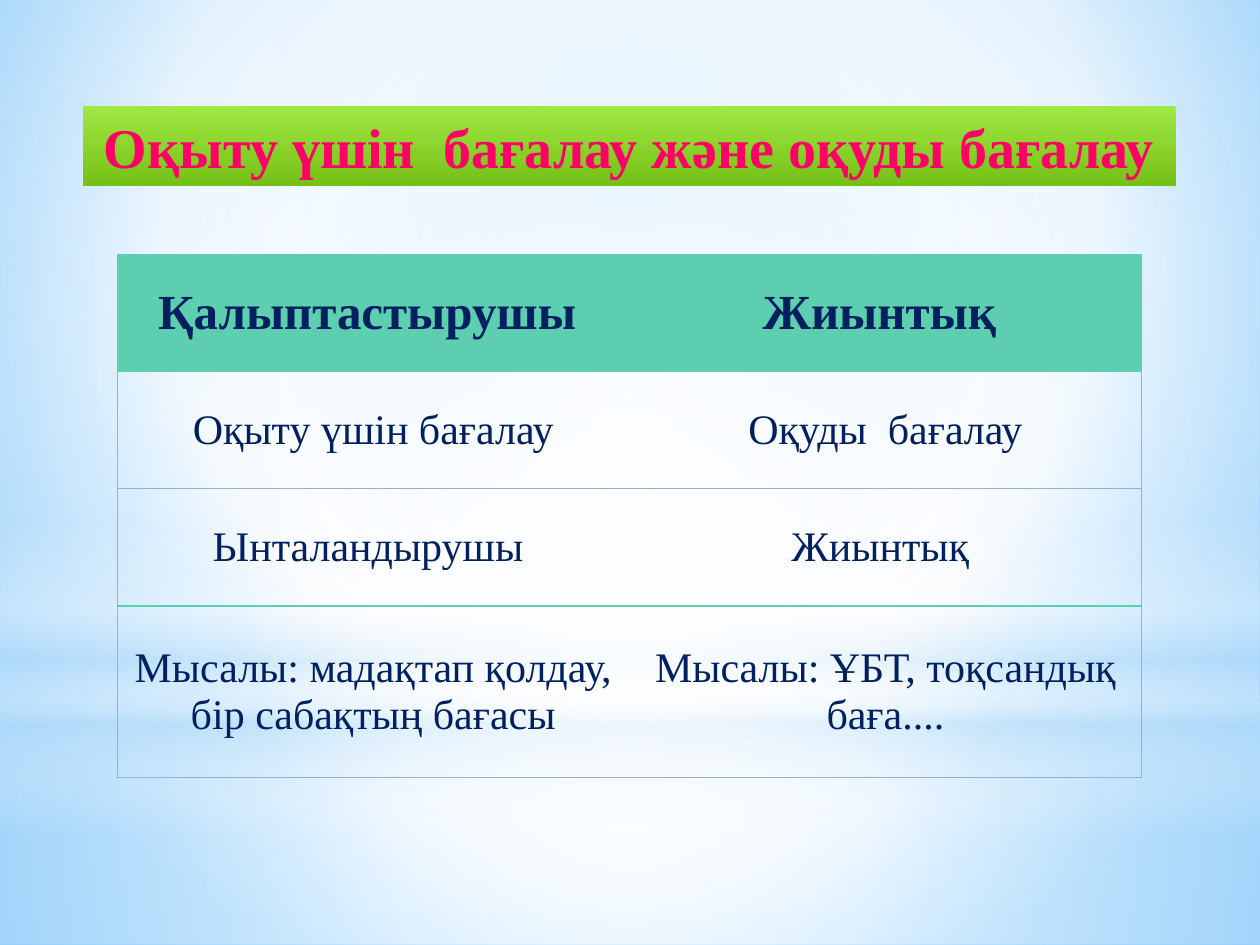
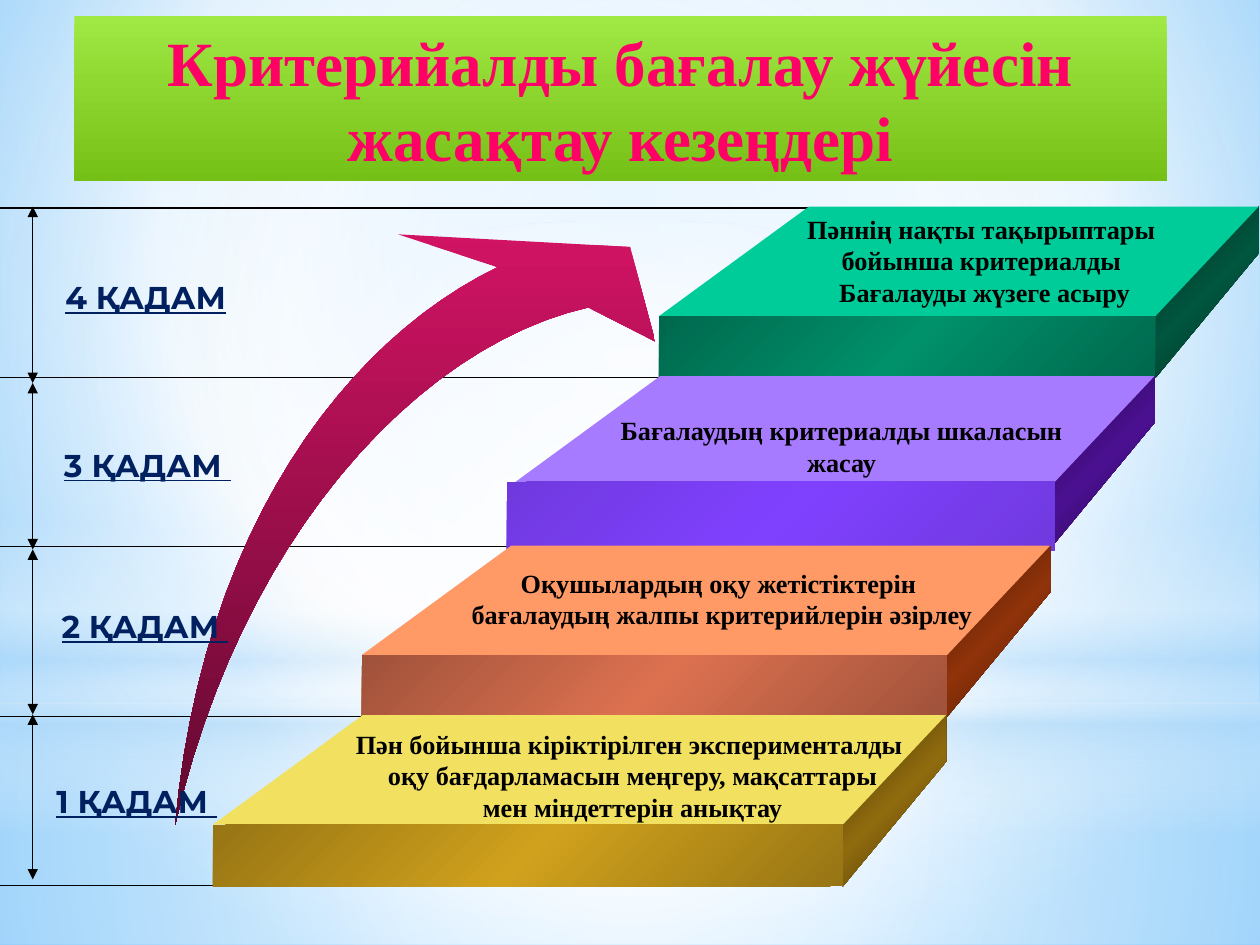
import pptx
import pptx.dml.color
import pptx.enum.dml
import pptx.enum.shapes
import pptx.enum.text
import pptx.oxml
import pptx.oxml.ns
import pptx.util

SHAPE = pptx.enum.shapes.MSO_SHAPE
ALIGN = pptx.enum.text.PP_ALIGN
MIDDLE = pptx.enum.text.MSO_ANCHOR.MIDDLE
qn = pptx.oxml.ns.qn

# The slide is a grid of 100 columns by 75 rows of square units.
COLUMNS, ROWS = 100, 75
UNIT = pptx.util.Inches(0.1)
SERIF, SANS = "Times New Roman", "Montserrat"
NO_STYLE = "{2D5ABB26-0587-4C30-8999-92F81FD0307C}"
COLORS = {
    "white": "FFFFFF", "sky": "9ED5FF", "blue": "5BB9FF", "mist": "B4DCFA",
    "lime": "A0E844", "leaf": "75C016", "pink": "FF0066", "navy": "002060",
    "mint": "5DCEAF", "rule": "90B4CC", "black": "000000",
    "arrow_top": "D11364", "arrow_tail": "61092E",
}
CENTRE = (50, 50, 50, 50)

TABLE_ROWS = [
    ("Қалыптастырушы ", "Жиынтық "),
    ("Оқыту үшін бағалау", "Оқуды  бағалау"),
    ("Ынталандырушы ", "Жиынтық "),
    ("Мысалы: мадақтап қолдау, бір сабақтың бағасы",
     "Мысалы: ҰБТ, тоқсандық баға...."),
]
ROW_HEIGHTS = (9.3, 9.3, 9.3, 13.6)

# From the top step down: top face, (edge, middle) of front and of side,
# how far the front stands out, text box and lines, label and its corner.
STEPS = [
    dict(top="00CC99", front=("00684D", "00906A"), side=("00281D", "00563F"),
         flare=0, box=(55.5, 16.4, 45.3, 8.6),
         lines=["Пәннің нақты тақырыптары ", "бойынша критериалды ",
                "Бағалауды жүзеге асыру"],
         label="4 ҚАДАМ", corner=(4.2, 21.6)),
    dict(top="A77BFF", front=("6F39DE", "8041FF"), side=("230744", "4B1092"),
         flare=0.3, box=(46.5, 32.4, 40.6, 6.1),
         lines=["Бағалаудың критериалды шкаласын жасау"],
         label="3 ҚАДАМ ", corner=(4.1, 34.9)),
    dict(top="FF9966", front=("A0523A", "DC7150"), side=("431805", "90330A"),
         flare=0, box=(32.3, 44.5, 50, 6.1),
         lines=["Оқушылардың оқу жетістіктерін ",
                "бағалаудың жалпы критерийлерін әзірлеу"],
         label="2 ҚАДАМ ", corner=(3.9, 47.7)),
    dict(top="F2E160", front=("977514", "D0A11C"), side=("433206", "906B0E"),
         flare=0, box=(23, 57.3, 53.9, 8.6),
         lines=["Пән бойынша кіріктірілген эксперименталды",
                " оқу бағдарламасын меңгеру, мақсаттары",
                " мен міндеттерін анықтау"],
         label="1 ҚАДАМ ", corner=(3.5, 61.6)),
]
STEP_TOP, STEP_RISE = 16.4, 13.45
FRONT_LEFT, LEFT_SHIFT = 52.3, 11.8
FRONT_RIGHT, RIGHT_SHIFT = 91.7, 8.27
SLANT, DEPTH = 11.9, 8.2
FACE, FRONT, SIDE = 8.7, 4.9, 3.7
SPAN_ENDS = (16.4, 30.4, 43.6, 56.7, 69.8)


def grid(*values):
    return [pptx.util.Emu(round(value * UNIT)) for value in values]


def rgb(color):
    return pptx.dml.color.RGBColor.from_string(color)


def gradient_xml(stops, angle=None, focus=None):
    """Stops are (position, colour[, opacity]); focus is left, top, right, bottom."""
    marks = ""
    for position, color, *opacity in stops:
        alpha = "".join(f'<a:alpha val="{value * 1000}"/>' for value in opacity)
        marks += (f'<a:gs pos="{position * 1000}"><a:srgbClr val="{color}">'
                  f'{alpha}</a:srgbClr></a:gs>')
    if focus:
        left, top, right, bottom = (value * 1000 for value in focus)
        way = (f'<a:path path="circle"><a:fillToRect l="{left}" t="{top}" '
               f'r="{right}" b="{bottom}"/></a:path>')
    else:
        way = f'<a:lin ang="{angle * 60000}" scaled="0"/>'
    return pptx.oxml.parse_xml(
        f'<a:gradFill {pptx.oxml.ns.nsdecls("a")} rotWithShape="1">'
        f'<a:gsLst>{marks}</a:gsLst>{way}</a:gradFill>')


def fill_gradient(fill, properties, stops, **way):
    fill.solid()
    properties.replace(properties.find(qn("a:solidFill")),
                       gradient_xml(stops, **way))


def paint(shape, look, angle=45, focus=None):
    """Fill with one colour or with a list of gradient stops; no line."""
    shape.shadow.inherit = False
    shape.line.fill.background()
    if isinstance(look, str):
        shape.fill.solid()
        shape.fill.fore_color.rgb = rgb(look)
    else:
        fill_gradient(shape.fill, shape.element.spPr, look, angle=angle, focus=focus)
    return shape


def metal(edge, middle):
    return [(0, edge), (50, middle), (100, edge)]


def add_block(page, place, look, kind=SHAPE.RECTANGLE, **way):
    return paint(page.shapes.add_shape(kind, *grid(*place)), look, **way)


def add_outline(page, points, look, **way):
    start, *others = [grid(*point) for point in points]
    builder = page.shapes.build_freeform(*start, scale=1.0)
    builder.add_line_segments(others, close=True)
    return paint(builder.convert_to_shape(), look, **way)


def add_span(para, text, size, color, font=SERIF, bold=True, underline=None):
    span = para.add_run()
    span.text = text
    span.font.name, span.font.size = font, pptx.util.Pt(size)
    span.font.bold, span.font.underline = bold, underline
    span.font.color.rgb = rgb(color)


def add_text(page, place, lines, align=ALIGN.CENTER, **style):
    frame = page.shapes.add_textbox(*grid(*place)).text_frame
    frame.word_wrap = True
    for number, line in enumerate(lines):
        para = frame.add_paragraph() if number else frame.paragraphs[0]
        para.alignment = align
        add_span(para, line, **style)


def add_line(page, start, end, arrows=False):
    line = page.shapes.add_connector(
        pptx.enum.shapes.MSO_CONNECTOR.STRAIGHT, *grid(*start, *end))
    line.line.color.rgb = rgb(COLORS["black"])
    line.line.width = pptx.util.Pt(0.75)
    if arrows:
        for name in ("a:headEnd", "a:tailEnd"):
            tip = line.line._get_or_add_ln().makeelement(qn(name), {"type": "triangle"})
            line.line._get_or_add_ln().append(tip)
    properties = line.element.spPr
    properties.append(properties.makeelement(qn("a:effectLst"), {}))


def add_page(deck, title, place, size):
    page = deck.slides.add_slide(deck.slide_layouts[5])
    box = page.shapes.title
    box.left, box.top, box.width, box.height = grid(*place)
    fill_gradient(box.fill, box.element.spPr,
                  [(0, COLORS["lime"]), (100, COLORS["leaf"])], angle=90)
    frame = box.text_frame
    frame.word_wrap, frame.vertical_anchor = True, MIDDLE
    frame.auto_size = pptx.enum.text.MSO_AUTO_SIZE.NONE
    para = frame.paragraphs[0]
    para.alignment = ALIGN.CENTER
    add_span(para, title, size, COLORS["pink"])
    return page


def set_backdrop(deck, page):
    """Give the master its background and glows, drawn first on a page."""
    white, mist = COLORS["white"], COLORS["mist"]
    master = deck.slide_master
    fill = master.background.fill
    fill_gradient(fill, master.element.find(".//" + qn("p:bgPr")),
                  [(0, COLORS["sky"]), (60, white), (100, COLORS["blue"])],
                  focus=(20, 10, 20, 60))
    horizon = 55.8
    glows = [
        add_block(page, (0, horizon, COLUMNS, ROWS - horizon),
                  [(0, white, 91), (37, white, 76), (100, mist, 79)], focus=CENTRE),
        add_block(page, (0, 0, COLUMNS, horizon),
                  [(0, white, 89), (48, white, 62), (100, mist, 79)], focus=CENTRE),
        add_block(page, (0, 41.2, COLUMNS, 25),
                  [(0, white, 0), (29, white, 30), (45, mist, 40), (55, white, 26),
                   (65, mist, 60), (100, white, 0)], angle=90),
        add_block(page, (0, 17.5, COLUMNS, horizon),
                  [(0, white, 100), (56, white, 0)], SHAPE.OVAL, focus=CENTRE),
    ]
    for index, glow in enumerate(glows, start=2):
        master.shapes.element.insert(index, glow.element)


def set_borders(cell, **borders):
    """Sides are given in the order left, right, top, bottom."""
    properties = cell._tc.get_or_add_tcPr()
    for index, (side, color) in enumerate(borders.items()):
        properties.insert(index, pptx.oxml.parse_xml(
            f'<a:ln{side} {pptx.oxml.ns.nsdecls("a")} w="9525"><a:solidFill>'
            f'<a:srgbClr val="{color}"/></a:solidFill></a:ln{side}>'))


def add_comparison(page):
    place = grid(9.3, 20.2, 81.3, sum(ROW_HEIGHTS))
    frame = page.shapes.add_table(len(TABLE_ROWS), 2, *place)
    table = frame.table
    table.horz_banding = False
    frame.element.find(".//" + qn("a:tableStyleId")).text = NO_STYLE
    mint, rule = COLORS["mint"], COLORS["rule"]
    edges = (mint, mint, rule, mint, rule)
    for row, texts in enumerate(TABLE_ROWS):
        table.rows[row].height = grid(ROW_HEIGHTS[row])[0]
        header = row == 0
        for column, text in enumerate(texts):
            cell = table.cell(row, column)
            cell.vertical_anchor = MIDDLE
            if header:
                cell.fill.solid()
                cell.fill.fore_color.rgb = rgb(mint)
            else:
                cell.fill.background()
            para = cell.text_frame.paragraphs[0]
            para.alignment = ALIGN.CENTER
            add_span(para, text, 28 if header else 24, COLORS["navy"], bold=header)
            outer = {"R" if column else "L": mint if header else rule}
            set_borders(cell, **outer, T=edges[row], B=edges[row + 1])


def add_step(page, index, step):
    """Draw one stair as a side, a top and a front face."""
    top = STEP_TOP + STEP_RISE * index
    left = FRONT_LEFT - LEFT_SHIFT * index
    right = FRONT_RIGHT - RIGHT_SHIFT * index
    edge, back, flare = top + FACE, right + DEPTH, step["flare"]
    add_outline(page, [(back, top + SIDE), (right, edge + FRONT),
                       (right, edge), (back, top)], metal(*step["side"]))
    add_outline(page, [(right, edge), (left, edge), (left + SLANT, top),
                       (back, top)], step["top"])
    add_block(page, (left - flare, edge - flare, right - left + 2 * flare,
                     FRONT + 2 * flare), metal(*step["front"]))


def curve(start, first, second, end, pieces=24):
    """Points along a cubic Bezier curve."""
    points = []
    for piece in range(pieces + 1):
        t = piece / pieces
        weights = ((1 - t) ** 3, 3 * t * (1 - t) ** 2, 3 * t * t * (1 - t), t ** 3)
        points.append(tuple(
            sum(weight * value for weight, value in zip(weights, axis))
            for axis in zip(start, first, second, end)))
    return points


def add_rising_arrow(page):
    tail = (13.9, 65.5)
    outer = curve(tail, (16, 42), (27.5, 27), (39.5, 21.2))
    inner = curve((46.7, 24.4), (33, 27.5), (19, 43), tail)
    head = [(31.6, 18.6), (50, 19.6), (52, 27.1)]
    add_outline(page, outer + head + inner[:-1],
                [(0, COLORS["arrow_top"]), (100, COLORS["arrow_tail"])], angle=90)


def add_staircase(page):
    for index in range(len(STEPS) + 1):
        level = STEP_TOP + 0.1 + STEP_RISE * index
        add_line(page, (FRONT_LEFT + SLANT - LEFT_SHIFT * index, level), (0, level))
    for upper, lower in zip(SPAN_ENDS, SPAN_ENDS[1:]):
        add_line(page, (2.6, upper), (2.6, lower), arrows=True)
    add_rising_arrow(page)
    for index, step in enumerate(STEPS):
        add_step(page, index, step)
    for step in STEPS:
        add_text(page, (*step["corner"], 17, 4), [step["label"]], ALIGN.LEFT,
                 size=18, color=COLORS["navy"], font=SANS, underline=True)
        add_text(page, step["box"], step["lines"], size=15, color=COLORS["black"])


def main():
    deck = pptx.Presentation()
    deck.slide_width, deck.slide_height = grid(COLUMNS, ROWS)
    kinds = add_page(deck, "Оқыту үшін  бағалау және оқуды бағалау",
                     (6.6, 8.4, 86.7, 6.4), 32)
    set_backdrop(deck, kinds)
    add_comparison(kinds)
    stages = add_page(deck, "Критерийалды бағалау жүйесін жасақтау кезеңдері",
                      (5.9, 1.3, 86.7, 13.1), 36)
    add_staircase(stages)
    deck.save("out.pptx")


if __name__ == "__main__":
    main()
